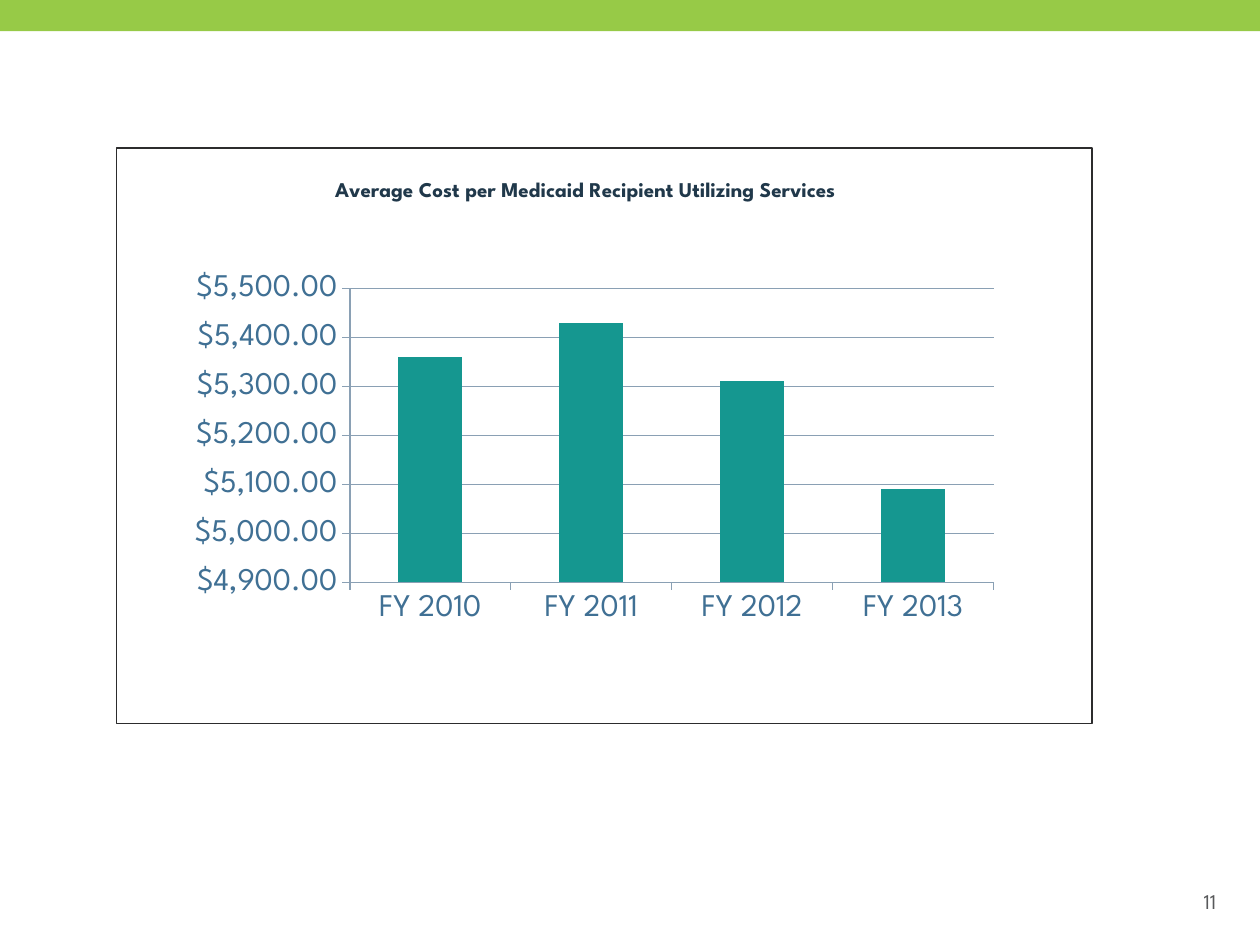
from lxml import etree
from pptx import Presentation
from pptx import util as u
from pptx.chart.data import CategoryChartData
from pptx.dml.color import RGBColor
from pptx.enum import chart as ch, shapes, text
from pptx.oxml import parse_xml
from pptx.oxml.ns import nsdecls, qn

FONT = "League Spartan"
GREEN = RGBColor(0x97, 0xCA, 0x47)
TEAL = RGBColor(0x15, 0x97, 0x90)
BLUE = RGBColor(0x40, 0x70, 0x94)
NAVY = RGBColor(0x20, 0x38, 0x4A)
STEEL = RGBColor(0x8A, 0xA0, 0xB4)
GRAY = RGBColor(0x58, 0x59, 0x5B)
COSTS = {"FY 2010": 5360, "FY 2011": 5430, "FY 2012": 5310, "FY 2013": 5090}


def style(font, size, color, bold=False):
    """Set the typeface, size, colour and weight of a font."""
    font.name, font.size, font.bold = FONT, u.Pt(size), bold
    font.color.rgb = color


def rule(line):
    """Give an axis or grid line its thin steel stroke."""
    line.color.rgb, line.width = STEEL, u.Pt(0.75)


def place(node, index, inner=False, **spots):
    """Pin a chart part at fractions of the chart area."""
    for old in node.findall(qn("c:layout")):
        node.remove(old)
    layout = parse_xml(f"<c:layout {nsdecls('c')}><c:manualLayout/></c:layout>")
    marks = {"layoutTarget": "inner"} if inner else {}
    marks.update(xMode="edge", yMode="edge", **spots)
    for tag, value in marks.items():
        etree.SubElement(layout[0], qn(f"c:{tag}")).set("val", str(value))
    node.insert(index, layout)


def frame(chart):
    """Draw the thin dark border round the chart."""
    border = parse_xml(
        f'<c:spPr {nsdecls("c", "a")}><a:noFill/><a:ln w="9525"><a:solidFill>'
        '<a:srgbClr val="2C2C2D"/></a:solidFill></a:ln></c:spPr>')
    chart.element.find(qn("c:chart")).addnext(border)


def band(slide, x, y, w, h):
    """Add the green band."""
    bar = slide.shapes.add_shape(shapes.MSO_SHAPE.RECTANGLE, x, y, w, h)
    bar.shadow.inherit = False
    bar.fill.solid()
    bar.fill.fore_color.rgb = GREEN
    bar.line.fill.background()


def costs(slide, x, y, w, h):
    """Add the column chart of yearly costs."""
    data = CategoryChartData()
    data.categories = list(COSTS)
    data.add_series("Average Cost", list(COSTS.values()))
    chart = slide.shapes.add_chart(
        ch.XL_CHART_TYPE.COLUMN_CLUSTERED, x, y, w, h, data).chart
    style(chart.font, 18, BLUE)
    chart.has_legend = False
    frame(chart)

    title = chart.chart_title.text_frame
    title.text = "Average Cost per Medicaid Recipient Utilizing Services"
    style(title.paragraphs[0].font, 12, NAVY, True)
    root = chart.element.find(qn("c:chart"))
    place(root.find(qn("c:title")), 1, x=0.22, y=0.05)
    place(root.find(qn("c:plotArea")), 0, True, x=0.239, y=0.244, w=0.66, h=0.511)

    plot = chart.plots[0]
    plot.gap_width, plot.vary_by_categories = 150, False
    fill = plot.series[0].format.fill
    fill.solid()
    fill.fore_color.rgb = TEAL

    for axis in (chart.category_axis, chart.value_axis):
        axis.major_tick_mark = ch.XL_TICK_MARK.OUTSIDE
        axis.minor_tick_mark = ch.XL_TICK_MARK.NONE
        rule(axis.format.line)
    axis = chart.value_axis
    axis.minimum_scale, axis.maximum_scale, axis.major_unit = 4900, 5500, 100
    axis.has_major_gridlines = True
    rule(axis.major_gridlines.format.line)
    axis.tick_labels.number_format = '"$"#,##0.00'
    axis.tick_labels.number_format_is_linked = False


def folio(slide, x, y, w, h):
    """Add the page number."""
    body = slide.shapes.add_textbox(x, y, w, h).text_frame
    body.word_wrap = True
    body.vertical_anchor = text.MSO_ANCHOR.MIDDLE
    line = body.paragraphs[0]
    line.text, line.alignment = "11", text.PP_ALIGN.RIGHT
    style(line.font, 12, GRAY)


def main():
    """Build and save the slide."""
    deck = Presentation()
    deck.slide_width, deck.slide_height = u.Cm(25.4), u.Cm(19.05)
    slide = deck.slides.add_slide(deck.slide_layouts[6])
    band(slide, 0, 0, deck.slide_width, u.Cm(0.63))
    folio(slide, u.Cm(18.85), u.Cm(17.65), u.Cm(5.92), u.Cm(1.02))
    costs(slide, u.Cm(2.34), u.Cm(2.97), u.Cm(19.69), u.Cm(11.63))
    deck.save("out.pptx")


if __name__ == "__main__":
    main()
